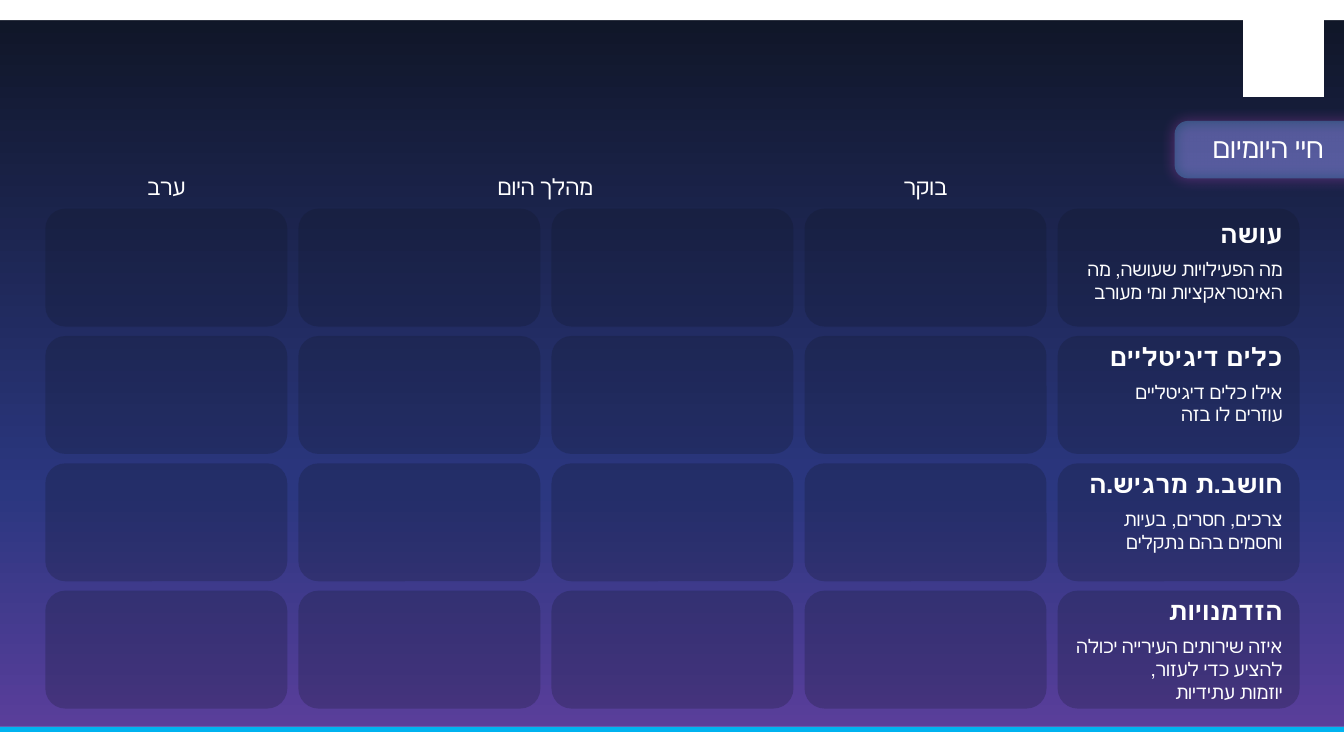
from dataclasses import dataclass

from lxml import etree
from pptx import Presentation
from pptx.dml.color import RGBColor
from pptx.enum import lang, shapes, text
from pptx.oxml import ns, parse_xml
from pptx.util import Inches, Pt


@dataclass(frozen=True)
class Theme:
    """Hold the colours, font and type sizes of the slide."""
    font: str = "Lato"
    white: str = "FFFFFF"
    blue: str = "00B3F0"
    tab: str = "4FC1F9"
    glow: str = "FB54F4"
    card: str = "0F1524"
    sky: tuple = ((0, "0F1525"), (65, "2B3780"), (100, "5F3F9E"))
    title: float = 20
    head: float = 18
    col: float = 16
    body: float = 13.5


T = Theme()
RECT = shapes.MSO_SHAPE.RECTANGLE
ROUND = shapes.MSO_SHAPE.ROUNDED_RECTANGLE
RIGHT, MID = text.PP_ALIGN.RIGHT, text.PP_ALIGN.CENTER
COLS = ((7.98, "בוקר"), (4.21, "מהלך היום"), (0.45, "ערב"))
ROWS = (
    ("עושה", ["מה הפעילויות שעושה, מה האינטראקציות ומי מעורב"], 0.05),
    ("כלים דיגיטליים", ["אילו כלים דיגיטליים", "עוזרים לו בזה"], 0),
    ("חושב.ת מרגיש.ה", ["צרכים, חסרים, בעיות", "וחסמים בהם נתקלים"], 0),
    ("הזדמנויות", ["איזה שירותים העירייה יכולה להציע כדי לעזור,",
                   "יוזמות עתידיות"], 0),
)


def add_box(slide, box, color, kind=RECT, alpha=None, round_by=None):
    """Add a flat shape with an optional opacity and corner size."""
    shape = slide.shapes.add_shape(kind, *map(Inches, box))
    shape.line.fill.background()
    shape.shadow.inherit = False
    shape.fill.solid()
    shape.fill.fore_color.rgb = RGBColor.from_string(color)
    if round_by is not None:
        shape.adjustments[0] = round_by
    if alpha is not None:
        tint = shape._element.spPr.find(".//" + ns.qn("a:srgbClr"))
        etree.SubElement(tint, ns.qn("a:alpha"), val=str(alpha * 1000))
    return shape


def set_text(shape, lines, size, align, bold=False):
    """Write right-to-left paragraphs into a shape."""
    frame = shape.text_frame
    form = {"word_wrap": True, "vertical_anchor": text.MSO_ANCHOR.TOP,
            "auto_size": text.MSO_AUTO_SIZE.SHAPE_TO_FIT_TEXT}
    for key, value in form.items():
        setattr(frame, key, value)
    for i, line in enumerate(lines):
        para = frame.add_paragraph() if i else frame.paragraphs[0]
        para.alignment = align
        para._p.get_or_add_pPr().set("rtl", "1")
        run = para.add_run()
        run.text = line
        look = {"name": T.font, "size": Pt(size), "bold": bold,
                "language_id": lang.MSO_LANGUAGE_ID.HEBREW}
        for key, value in look.items():
            setattr(run.font, key, value)
        run.font.color.rgb = RGBColor.from_string(T.white)


def add_text(slide, box, lines, size, align, bold=False):
    """Add a text box with right-to-left text."""
    area = slide.shapes.add_textbox(*map(Inches, box))
    set_text(area, lines, size, align, bold)


def add_frame(slide, wide, high):
    """Draw the gradient backdrop, the white bands and the blue rule."""
    sky = add_box(slide, (0, 0, wide, high), T.white)
    stops = "".join(f'<a:gs pos="{pos * 1000}"><a:srgbClr val="{color}"/></a:gs>'
                    for pos, color in T.sky)
    grad = parse_xml(f'<a:gradFill {ns.nsdecls("a")} rotWithShape="1"><a:gsLst>{stops}'
                     '</a:gsLst><a:lin ang="5400000" scaled="0"/></a:gradFill>')
    props = sky._element.spPr
    props.replace(props.find(ns.qn("a:solidFill")), grad)
    foot = 7.21
    add_box(slide, (0, 0, wide, 0.2), T.white)
    add_box(slide, (wide - 1, 0.04, 0.8, 0.92), T.white)
    add_box(slide, (0, foot, wide, high - foot), T.white)
    add_box(slide, (0, foot, wide, 0.05), T.blue)


def add_title(slide, left, top):
    """Place the title on a glowing tab that bleeds off the right edge."""
    tab = add_box(slide, (left, top, 2.83, 0.57), T.tab, ROUND, 30, 0.231)
    effects = tab._element.spPr.find(ns.qn("a:effectLst"))
    effects.append(parse_xml(
        f'<a:outerShdw {ns.nsdecls("a")} blurRad="{Pt(11.2)}" dist="0" dir="0" '
        f'algn="ctr" rotWithShape="0"><a:srgbClr val="{T.glow}"/></a:outerShdw>'))
    title = slide.shapes.title
    place = {"left": left, "top": top + 0.04, "width": 1.58, "height": 0.44}
    for key, value in place.items():
        setattr(title, key, Inches(value))
    set_text(title, ["חיי היומיום"], T.title, RIGHT)
    slide.shapes._spTree.append(title._element)


def add_grid(slide, left, top, wide, high):
    """Draw the cards, the column heads and the row labels."""
    card_w, card_h = 2.4, 1.17
    step_x = (wide - card_w) / 4
    step_y = (high - card_h) / (len(ROWS) - 1)
    for row, (head, lines, drop) in enumerate(ROWS):
        y = top + row * step_y
        for col in range(5):
            add_box(slide, (left + col * step_x, y, card_w, card_h),
                    T.card, ROUND, 24, 0.17)
        x = left + 4 * step_x + 0.06
        add_text(slide, (x, y + drop, 2.27, 0.4), [head], T.head, RIGHT, True)
        body_h = 0.81 if row == len(ROWS) - 1 else 0.57
        add_text(slide, (x, y + drop + 0.39, 2.27, body_h), lines, T.body, RIGHT)
    for x, name in COLS:
        add_text(slide, (x, top - 0.4, card_w, 0.37), [name], T.col, MID)


def main():
    """Build and save the slide."""
    deck = Presentation()
    wide, high = 13.33, 7.5
    deck.slide_width, deck.slide_height = Inches(wide), Inches(high)
    slide = deck.slides.add_slide(deck.slide_layouts[5])
    add_frame(slide, wide, high)
    add_title(slide, 11.65, 1.2)
    add_grid(slide, 0.45, 2.07, 12.44, 4.96)
    deck.save("out.pptx")


if __name__ == "__main__":
    main()
